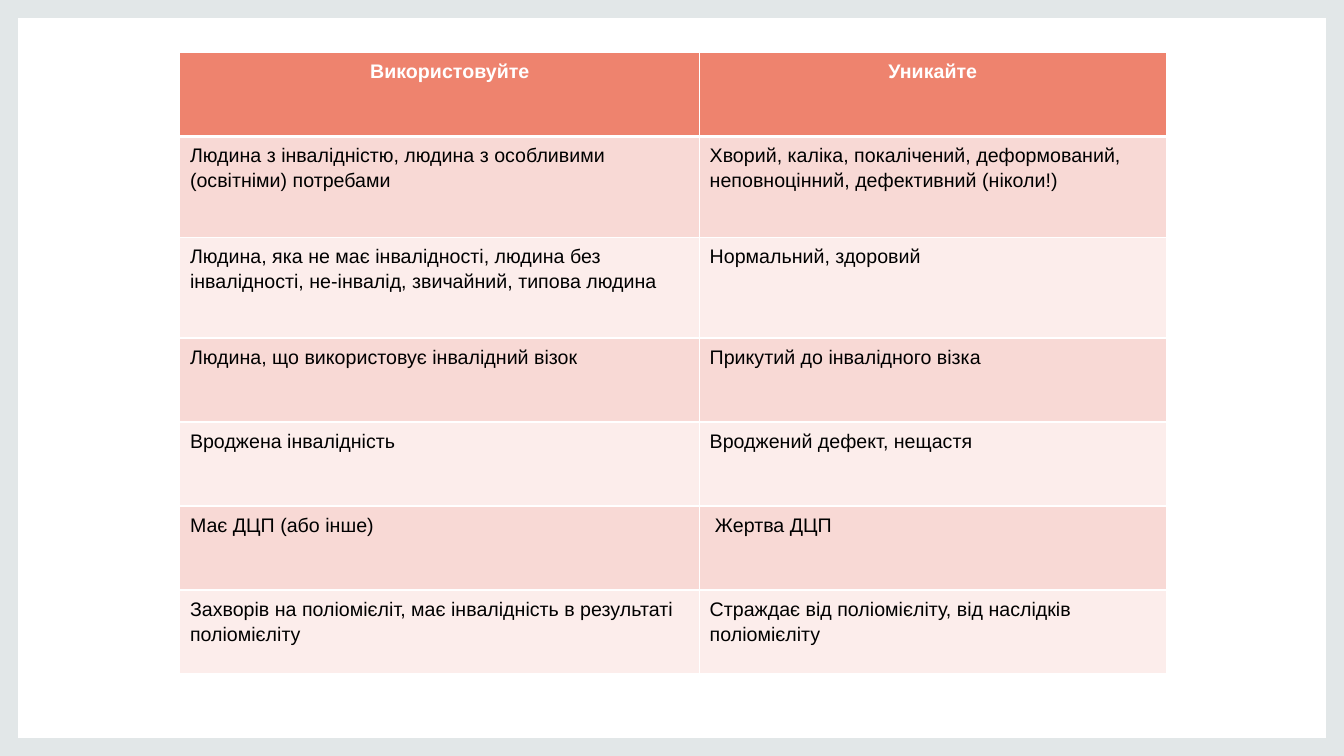
from lxml import etree
from pptx import Presentation
from pptx import util as u
from pptx.dml.color import RGBColor
from pptx.enum import shapes, text
from pptx.oxml.ns import qn

PX = 9525  # EMU per px, 96 px to the inch
WIDTH, HEIGHT, BORDER = 1280, 720, 17
CELL_MARGIN = 10

COLUMNS = [495, 445]
ROW_HEIGHTS = [80, 96, 96, 80, 80, 80, 80]
ROWS = [
    ("Використовуйте", "Уникайте"),
    ("Людина з інвалідністю, людина з особливими (освітніми) потребами",
     "Хворий, каліка, покалічений, деформований, неповноцінний, дефективний (ніколи!)"),
    ("Людина, яка не має інвалідності, людина без інвалідності, не-інвалід, "
     "звичайний, типова людина",
     "Нормальний, здоровий"),
    ("Людина, що використовує інвалідний візок", "Прикутий до інвалідного візка"),
    ("Вроджена інвалідність", "Вроджений дефект, нещастя"),
    ("Має ДЦП (або інше)", "Жертва ДЦП"),
    ("Захворів на поліомієліт, має інвалідність в результаті поліомієліту",
     "Страждає від поліомієліту, від наслідків поліомієліту"),
]
EXTRA_INDENT = {(0, 0): 20, (5, 1): 5}  # (row, column): px
HEADER_FILL, BAND_FILLS = "EE836E", ("F8D9D5", "FCEDEB")


def px(n):
    return u.Emu(n * PX)


def rgb(value):
    return RGBColor.from_string(value)


def paint(target, color):
    target.fill.solid()
    target.fill.fore_color.rgb = rgb(color)


def set_all(target, values):
    for name, value in values.items():
        setattr(target, name, value)


def add_frame(s, x, y, w, h):
    sp = s.shapes.add_shape(shapes.MSO_SHAPE.FRAME, px(x), px(y), px(w), px(h))
    sp.adjustments[0] = BORDER / min(w, h)
    sp.shadow.inherit = False
    sp.line.fill.background()
    paint(sp, "E2E7E8")


def set_borders(cell, top, bottom):
    tc_pr = cell._tc.get_or_add_tcPr()
    widths = {"a:lnL": 1, "a:lnR": 1, "a:lnT": top, "a:lnB": bottom}
    for i, (tag, width) in enumerate(widths.items()):
        ln = etree.Element(qn(tag), w=str(u.Pt(width)))
        fill = etree.SubElement(ln, qn("a:solidFill"))
        etree.SubElement(fill, qn("a:srgbClr"), val="FFFFFF")
        tc_pr.insert(i, ln)


def write_cell(cell, words, header, indent):
    set_all(cell, {"margin_left": px(CELL_MARGIN + indent),
                   "margin_right": px(CELL_MARGIN)})
    p = cell.text_frame.paragraphs[0]
    set_all(p, {"line_spacing": 1.15, "space_after": u.Pt(10),
                "alignment": text.PP_ALIGN.CENTER if header else text.PP_ALIGN.LEFT})
    r = p.add_run()
    r.text = words
    set_all(r.font, {"name": "Arial", "size": u.Pt(14), "bold": header})
    r.font.color.rgb = rgb("FFFFFF" if header else "000000")


def add_terms_table(s, x, y):
    table = s.shapes.add_table(len(ROWS), len(COLUMNS), px(x), px(y),
                               px(sum(COLUMNS)), px(sum(ROW_HEIGHTS))).table
    for column, width in zip(table.columns, COLUMNS):
        column.width = px(width)
    for i, (words, height) in enumerate(zip(ROWS, ROW_HEIGHTS)):
        table.rows[i].height = px(height)
        for j, word in enumerate(words):
            cell = table.cell(i, j)
            write_cell(cell, word, i == 0, EXTRA_INDENT.get((i, j), 0))
            paint(cell, BAND_FILLS[(i - 1) % 2] if i else HEADER_FILL)
            # A thicker rule parts the header from the body
            set_borders(cell, 3 if i == 1 else 1, 3 if i == 0 else 1)


def main():
    prs = Presentation()
    set_all(prs, {"slide_width": px(WIDTH), "slide_height": px(HEIGHT)})
    s = prs.slides.add_slide(prs.slide_layouts[6])
    paint(s.background, "FFFFFF")
    # Border around the slide
    add_frame(s, 0, 0, WIDTH, HEIGHT)
    # Terms to use and to avoid
    add_terms_table(s, 171, 50)
    prs.save("out.pptx")


if __name__ == "__main__":
    main()
